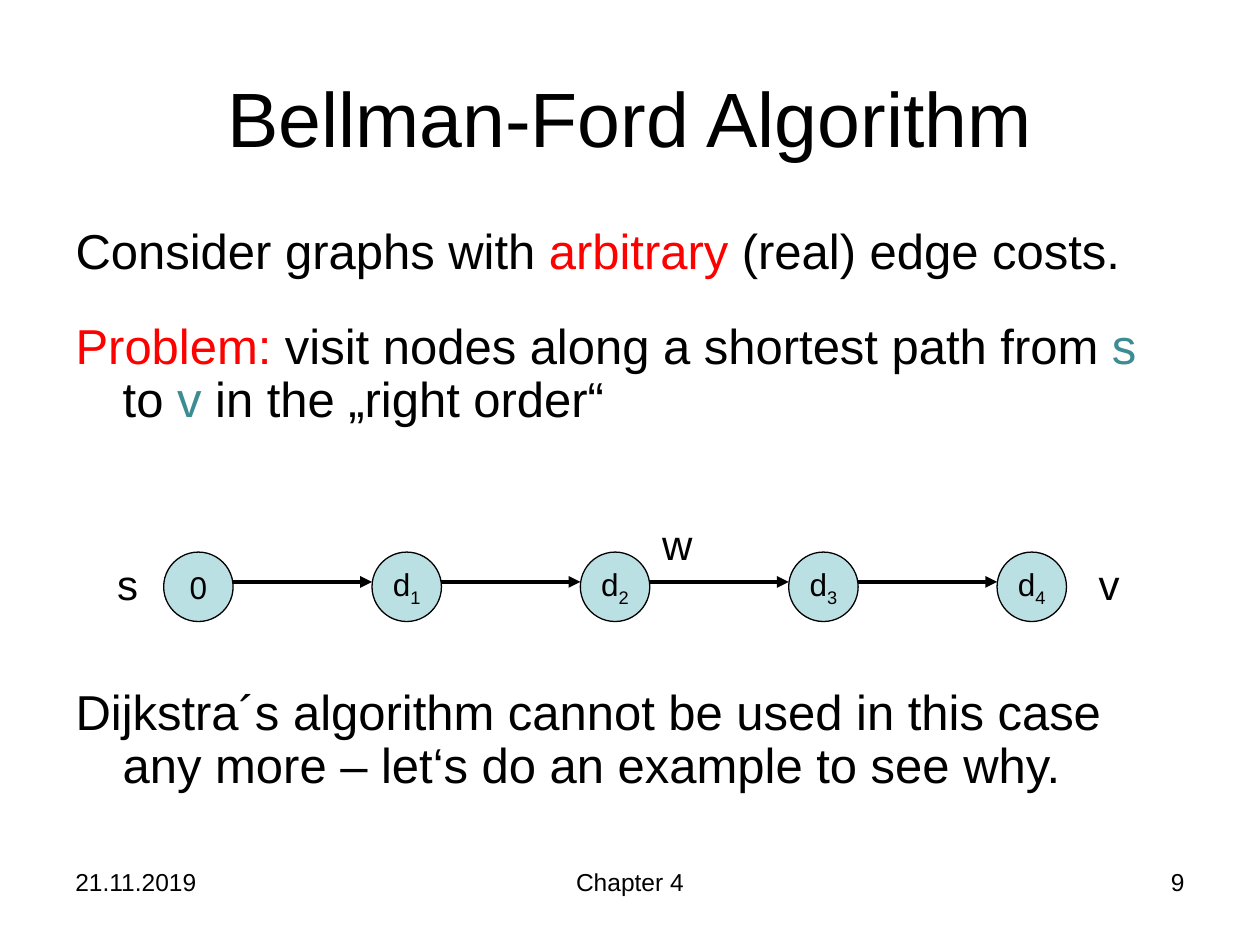
from lxml.etree import SubElement
from pptx import Presentation
from pptx.dml.color import RGBColor
from pptx.enum.shapes import MSO_CONNECTOR, MSO_SHAPE
from pptx.enum.text import MSO_ANCHOR, MSO_AUTO_SIZE, PP_ALIGN
from pptx.oxml.ns import qn
from pptx.util import Cm, Pt

COLORS = {"black": "000000", "red": "FF0000", "teal": "3C8C93", "node": "BBE0E3"}


def color(name):
    return RGBColor.from_string(COLORS[name])


def write(paragraph, text, size=28, fill="black", align=None, subscript=False):
    """Append a formatted run to a paragraph."""
    if align is not None:
        paragraph.alignment = align
    run = paragraph.add_run()
    run.text = text
    run.font.name = "Arial"
    run.font.size = Pt(size)
    run.font.color.rgb = color(fill)
    if subscript:
        run.font._element.set("baseline", "-25000")


prs = Presentation()
prs.slide_width, prs.slide_height = Cm(25.4), Cm(19.05)
slide = prs.slides.add_slide(prs.slide_layouts[1])
shapes = slide.shapes

# Title
title = shapes.title
title.left, title.top, title.width, title.height = Cm(1.27), Cm(0.76), Cm(22.86), Cm(3.18)
title.text_frame.vertical_anchor = MSO_ANCHOR.MIDDLE
write(title.text_frame.paragraphs[0], "Bellman-Ford Algorithm", size=44, align=PP_ALIGN.CENTER)

# Body: space before each paragraph, then its coloured pieces
statements = [
    (5.6, [("Consider graphs with ", "black"), ("arbitrary", "red"),
           (" (real) edge costs.", "black")]),
    (24, [("Problem: ", "red"), ("visit nodes along a shortest path from ", "black"),
          ("s", "teal"), (" to ", "black"), ("v", "teal"),
          (" in the „right order“", "black")]),
    (148.7, [("Dijkstra´s algorithm cannot be used in this case any more"
              " – let‘s do an example to see why.", "black")]),
]
body = slide.placeholders[1]
body.left, body.top, body.width, body.height = Cm(1.27), Cm(4.45), Cm(22.86), Cm(13.08)
body.text_frame.auto_size = MSO_AUTO_SIZE.NONE
for index, (gap, pieces) in enumerate(statements):
    statement = body.text_frame.paragraphs[0] if index == 0 else body.text_frame.add_paragraph()
    statement.line_spacing = 0.9
    statement.space_before = Pt(gap)
    properties = statement._p.get_or_add_pPr()
    properties.set("marL", str(Cm(0.95)))
    properties.set("indent", str(Cm(-0.95)))
    SubElement(properties, qn("a:buNone"))
    for text, fill in pieces:
        write(statement, text, fill=fill)

# Path nodes
node_left, node_top, node_size, node_step = 3.3, 11.13, 1.4, 4.2
distances = ["0", "d1", "d2", "d3", "d4"]
for index, distance in enumerate(distances):
    node = shapes.add_shape(MSO_SHAPE.OVAL, Cm(node_left + index * node_step), Cm(node_top),
                            Cm(node_size), Cm(node_size))
    node.shadow.inherit = False
    node.fill.solid()
    node.fill.fore_color.rgb = color("node")
    node.line.color.rgb = color("black")
    node.line.width = Pt(0.75)
    node.text_frame.word_wrap = False
    node.text_frame.vertical_anchor = MSO_ANCHOR.MIDDLE
    label = node.text_frame.paragraphs[0]
    write(label, distance[0], size=18, align=PP_ALIGN.CENTER)
    if distance[1:]:
        write(label, distance[1:], size=18, subscript=True)

# Edges between neighbouring nodes
edge_y = Cm(11.73)
for index in range(len(distances) - 1):
    start = node_left + node_size + index * node_step
    edge = shapes.add_connector(MSO_CONNECTOR.STRAIGHT, Cm(start), edge_y,
                                Cm(start + node_step - node_size), edge_y)
    edge.line.color.rgb = color("black")
    edge.line.width = Pt(2.25)
    SubElement(edge.line._get_or_add_ln(), qn("a:tailEnd"), type="triangle")
    SubElement(edge._element.spPr, qn("a:effectLst"))

# Node names and footer: text, left, top, width, height, size, alignment, wrap
captions = [
    ("s", 2.11, 11.13, 0.94, 1.27, 24, PP_ALIGN.LEFT, False),
    ("v", 21.9, 11.13, 0.94, 1.27, 24, PP_ALIGN.LEFT, False),
    ("w", 13.1, 10.33, 1.12, 1.27, 24, PP_ALIGN.LEFT, False),
    ("21.11.2019", 1.27, 17.35, 5.92, 1.32, 14, PP_ALIGN.LEFT, True),
    ("Chapter 4", 8.68, 17.35, 8.04, 1.32, 14, PP_ALIGN.CENTER, True),
    ("9", 18.21, 17.35, 5.92, 1.32, 14, PP_ALIGN.RIGHT, True),
]
for text, left, top, width, height, size, align, wrap in captions:
    caption = shapes.add_textbox(Cm(left), Cm(top), Cm(width), Cm(height))
    caption.text_frame.word_wrap = wrap
    write(caption.text_frame.paragraphs[0], text, size=size, align=align)

prs.save("out.pptx")
